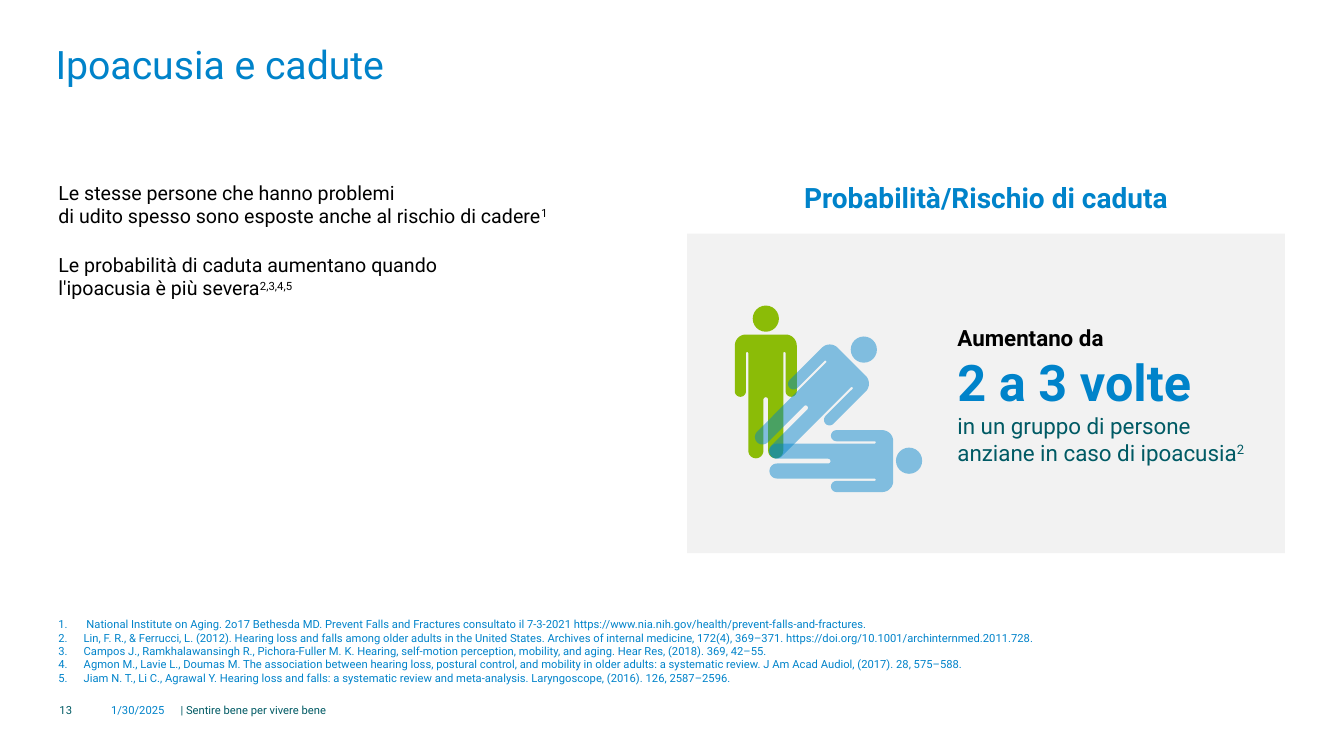
from copy import deepcopy
from math import cos, radians, sin

from lxml import etree
from pptx import Presentation
from pptx.dml.color import RGBColor
from pptx.enum.shapes import MSO_SHAPE
from pptx.enum.text import MSO_ANCHOR, MSO_AUTO_SIZE, PP_ALIGN
from pptx.oxml.ns import qn
from pptx.util import Cm, Pt

LEFT, CENTER = PP_ALIGN.LEFT, PP_ALIGN.CENTER
TOP, BOTTOM = MSO_ANCHOR.TOP, MSO_ANCHOR.BOTTOM
NO_AUTOFIT = MSO_AUTO_SIZE.NONE
OVAL, RECTANGLE = MSO_SHAPE.OVAL, MSO_SHAPE.RECTANGLE

FONT = "Roboto"
COLORS = {
    "blue": "0083CA",
    "teal": "005A64",
    "green": "8BBC07",
    "grey": "F2F2F2",
    "black": "000000",
}
HEAD_SIZE = 0.66
BODY_ARCS = [
    (0.28, 0.28, 0.28, 180, 270),
    (1.28, 0.28, 0.28, 270, 360),
    (1.42, 1.43, 0.14, 0, 180),
    (1.25, 0.47, 0.03, 0, -180),
    (1.03, 2.93, 0.19, 0, 180),
    (0.78, 1.64, 0.06, 0, -180),
    (0.53, 2.93, 0.19, 0, 180),
    (0.31, 0.47, 0.03, 0, -180),
    (0.14, 1.43, 0.14, 0, 180),
]
ARC_STEPS = 12
PEOPLE = [
    ((18.97, 7.70), (18.52, 8.43), 0, "green", None),
    ((21.44, 8.48), (19.58, 8.66), 45, "blue", 47),
    ((22.58, 11.28), (20.17, 10.06), 90, "blue", 47),
]
REFERENCES = [
    " National Institute on Aging. 2o17 Bethesda MD. Prevent Falls and Fractures consultato il 7-3-2021 https://www.nia.nih.gov/health/prevent-falls-and-fractures.",
    "Lin, F. R., & Ferrucci, L. (2012). Hearing loss and falls among older adults in the United States. Archives of internal medicine, 172(4), 369–371. https://doi.org/10.1001/archinternmed.2011.728.",
    "Campos J., Ramkhalawansingh R., Pichora-Fuller M. K. Hearing, self-motion perception, mobility, and aging. Hear Res, (2018). 369, 42–55.",
    "Agmon M., Lavie L., Doumas M. The association between hearing loss, postural control, and mobility in older adults: a systematic review. J Am Acad Audiol, (2017). 28, 575–588.",
    "Jiam N. T., Li C., Agrawal Y. Hearing loss and falls: a systematic review and meta-analysis. Laryngoscope, (2016). 126, 2587–2596.",
]
FOOTER = [
    ("13", 1.50, 0.61, "teal", LEFT),
    ("1/30/2025", 2.41, 2.13, "blue", CENTER),
    ("| Sentire bene per vivere bene", 4.55, 18.42, "teal", LEFT),
]


def place(shape, left, top, width, height):
    """Move and size a shape in centimetres."""
    shape.left, shape.top = Cm(left), Cm(top)
    shape.width, shape.height = Cm(width), Cm(height)


def prepare_frame(box, anchor=TOP, inset=(0, 0)):
    """Set wrapping, anchor and insets of a box, and return its text frame."""
    frame = box.text_frame
    frame.word_wrap = True
    frame.auto_size = NO_AUTOFIT
    frame.vertical_anchor = anchor
    frame.margin_left = frame.margin_right = Cm(inset[0])
    frame.margin_top = frame.margin_bottom = Cm(inset[1])
    return frame


def add_text_box(page, bounds, **layout):
    """Add a text box and return its text frame."""
    box = page.shapes.add_textbox(*map(Cm, bounds))
    return prepare_frame(box, **layout)


def next_para(frame, index, align=LEFT, before=0):
    """Return the first paragraph or a new one, aligned and spaced."""
    para = frame.add_paragraph() if index else frame.paragraphs[0]
    para.alignment = align
    para.space_before = Pt(before if index else 0)
    return para


def set_bullet(para, color=None, indent=0):
    """Number a paragraph in the given colour, or remove its bullet."""
    properties = para._p.get_or_add_pPr()
    properties.set("marL", str(Cm(indent)))
    properties.set("indent", str(-Cm(indent)))
    if color is None:
        etree.SubElement(properties, qn("a:buNone"))
        return
    bullet_color = etree.SubElement(properties, qn("a:buClr"))
    etree.SubElement(bullet_color, qn("a:srgbClr"), val=COLORS[color])
    etree.SubElement(properties, qn("a:buAutoNum"), type="arabicPeriod")


def write(para, text, size=8, color="blue", bold=False, raised=False):
    """Add formatted text, with line breaks of the same format."""
    for index, line in enumerate(text.split("\n")):
        if index:
            para.add_line_break()
            para._p[-1].append(deepcopy(span._r.rPr))
        if not line:
            continue
        span = para.add_run()
        span.text = line
        span.font.name = FONT
        span.font.size = Pt(size)
        span.font.bold = bold
        span.font.color.rgb = RGBColor.from_string(COLORS[color])
        if raised:
            span._r.get_or_add_rPr().set("baseline", "30000")


def paint(shape, color, opacity=None):
    """Fill a shape without line or shadow, optionally see-through."""
    shape.shadow.inherit = False
    shape.line.fill.background()
    shape.fill.solid()
    shape.fill.fore_color.rgb = RGBColor.from_string(COLORS[color])
    if opacity:
        tint = shape._element.spPr.find(qn("a:solidFill"))[0]
        etree.SubElement(tint, qn("a:alpha"), val=str(opacity * 1000))


def body_outline():
    """Return the outline of a standing body, joined from arcs."""
    points = []
    for center_x, center_y, radius, start, end in BODY_ARCS:
        for step in range(ARC_STEPS + 1):
            angle = radians(start + (end - start) * step / ARC_STEPS)
            points.append((Cm(center_x + radius * cos(angle)),
                           Cm(center_y + radius * sin(angle))))
    return points


def add_person(page, head_corner, body_corner, rotation, color, opacity):
    """Draw a head and a body turned by the given angle."""
    head = page.shapes.add_shape(
        OVAL, *map(Cm, (*head_corner, HEAD_SIZE, HEAD_SIZE)))
    paint(head, color, opacity)
    first, *others = body_outline()
    builder = page.shapes.build_freeform(*first)
    builder.add_line_segments(others, close=True)
    body = builder.convert_to_shape()
    body.left, body.top = map(Cm, body_corner)
    body.rotation = rotation
    paint(body, color, opacity)


def fill_placeholders(page):
    """Write the title and the two statements."""
    title, body = page.shapes.title, page.placeholders[1]
    place(title, 1.40, 1.12, 23.83, 1.09)
    para = next_para(prepare_frame(title, anchor=BOTTOM), 0)
    para.line_spacing = 0.9
    write(para, "Ipoacusia e cadute", size=28)
    place(body, 1.47, 4.55, 15.06, 12.70)
    frame = prepare_frame(body)
    statements = [
        ("Le stesse persone che hanno problemi\ndi udito spesso sono esposte anche al rischio di cadere", "1"),
        ("Le probabilità di caduta aumentano quando\nl'ipoacusia è più severa", "2,3,4,5"),
    ]
    for index, (statement, sources) in enumerate(statements):
        para = next_para(frame, index, before=18)
        set_bullet(para)
        write(para, statement, size=14, color="black")
        write(para, sources, size=14, color="black", raised=True)


def add_risk_panel(page):
    """Add the heading, the grey panel, the falling people and the figure."""
    heading = add_text_box(page, (17.32, 4.55, 15.06, 0.69))
    write(next_para(heading, 0, align=CENTER),
          "Probabilità/Rischio di caduta", size=20, bold=True)
    panel = page.shapes.add_shape(
        RECTANGLE, *map(Cm, (17.32, 5.89, 15.06, 8.05)))
    paint(panel, "grey")
    for person in PEOPLE:
        add_person(page, *person)
    frame = add_text_box(page, (23.88, 8.05, 7.87, 3.84), inset=(0.25, 0.13))
    para = next_para(frame, 0)
    write(para, "Aumentano da\n", size=16, color="black", bold=True)
    write(para, "2 a 3 volte", size=36, bold=True)
    para = next_para(frame, 1)
    write(para, "in un gruppo di persone anziane in caso di ipoacusia",
          size=16, color="teal")
    write(para, "2", size=16, color="teal", raised=True)


def add_references_and_footer(page):
    """Add the numbered references and the footer line."""
    frame = add_text_box(page, (1.47, 15.95, 30.10, 1.30), anchor=BOTTOM)
    for index, reference in enumerate(REFERENCES):
        para = next_para(frame, index)
        set_bullet(para, color="blue", indent=0.64)
        write(para, reference)
    for text, left, width, color, align in FOOTER:
        frame = add_text_box(page, (left, 17.73, width, 0.43))
        write(next_para(frame, 0, align=align), text, color=color)


def main():
    """Build the slide and save the deck."""
    deck = Presentation()
    deck.slide_width, deck.slide_height = Cm(33.87), Cm(19.05)
    page = deck.slides.add_slide(deck.slide_layouts[1])
    fill_placeholders(page)
    add_risk_panel(page)
    add_references_and_footer(page)
    deck.save("out.pptx")


if __name__ == "__main__":
    main()
